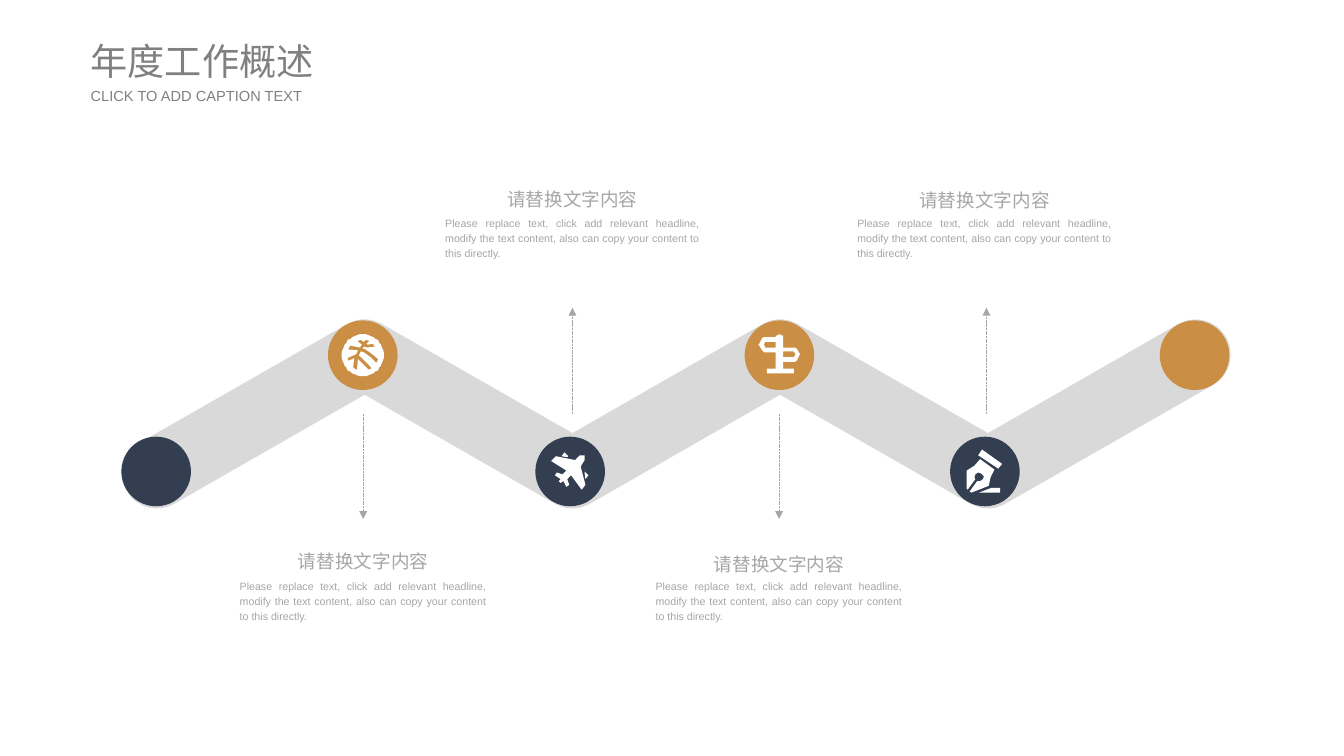
import math

from lxml import etree
from pptx import Presentation
from pptx import util as u
from pptx.dml.color import RGBColor
from pptx.enum import dml, shapes, text
from pptx.oxml.ns import qn

FONT = "Arial"
NAVY, GOLD, BAND, WHITE = "333F50", "CA8F45", "D9D9D9", "FFFFFF"
TITLE_GREY, LABEL_GREY = "808080", "A6A6A6"
HEADING = "请替换文字内容"
BODY = ("Please replace text, click add relevant headline, modify the text content, "
        "also can copy your content to this directly.")
NODE_SIZE, UPPER_Y, LOWER_Y = 1.85, 9.44, 12.53
CM_UNIT, ICON_UNIT = 0.01, 0.0254


def arc(x, y, radius, start, end, steps=24):
    angles = (math.radians(start + (end - start) * i / steps) for i in range(steps + 1))
    return [(x + radius * math.cos(a), y + radius * math.sin(a)) for a in angles]


BALL = [
    arc(0, 0, 22, 0, 360, 48),
    [(-13, -10), (-15, -7), (-15, -6), (-5, -5), (-6, -3), (-7, -1), (-16, 3),
     (-15, 6), (-9, 3), (-10, 13), (-7, 15), (-6, 15), (-5, 4), (0, 9), (6, 15),
     (9, 14), (9, 13), (3, 7), (-4, 0), (-3, -2), (-2, -4), (1, -3), (8, 2),
     (14, 8), (15, 7), (16, 4), (10, -1), (3, -6), (0, -7), (1, -9), (4, -8),
     (13, -9), (11, -11), (11, -12), (5, -11), (4, -12), (7, -15), (3, -16),
     (1, -14), (-2, -16), (-5, -15), (-6, -15), (-1, -11), (-3, -8)],
]
SIGNPOST = [
    [(4, -8), (16, -8), (18, -7), (21, -2), (22, -1), (21, 0), (18, 6), (16, 7),
     (4, 7), (4, 14), (15, 14), (15, 19), (-13, 19), (-13, 14), (-4, 14), (-4, -3),
     (-16, -3), (-18, -5), (-21, -10), (-22, -11), (-21, -12), (-18, -18),
     (-16, -19), (-4, -19), (-4, -20), (0, -22), (4, -20)],
    [(-4, -14), (-15, -14), (-16, -11), (-15, -8), (-4, -8)],
    [(15, -4), (4, -4), (4, 2), (15, 2), (17, -1)],
]
PLANE = [
    [(15, -17), (15, -12), (12, -7), (11, -5), (16, 14), (12, 19), (1, 4), (-3, 8),
     (-1, 14), (-4, 16), (-7, 10), (-10, 12), (-12, 10), (-10, 8), (-16, 4),
     (-14, 1), (-8, 3), (-4, -1), (-20, -11), (-15, -16), (5, -12), (10, -17)],
    [(19, 4), (15, 0), (15, 1), (16, 8)],
    [(-6, -20), (-9, -16), (-3, -15), (-2, -16)],
]
PEN = [
    [(-18, 19), (-19, 18), (-19, -1), (-11, -6), (-5, -13), (10, -2), (6, 6),
     (4, 15), (-14, 22), (-16, 21), (-8, 10), (-5, 10), (-2, 8), (-1, 5), (-4, 2),
     (-7, 1), (-10, 3), (-11, 6), (-10, 8), (-18, 19)],
    [(-6, 22), (16, 22), (16, 17), (7, 17)],
    [(14, -3), (18, -8), (-3, -23), (-7, -17)],
]
NODES = [
    (4.15, LOWER_Y, NAVY, None),
    (9.64, UPPER_Y, GOLD, BALL),
    (15.15, LOWER_Y, NAVY, PLANE),
    (20.71, UPPER_Y, GOLD, SIGNPOST),
    (26.17, LOWER_Y, NAVY, PEN),
    (31.74, UPPER_Y, GOLD, None),
]
LABELS = [
    (9.65, 14.38, 15.21, 7.06),
    (20.7, 14.45, 15.21, 7.06),
    (15.21, 4.75, 5.56, 7.26),
    (26.16, 4.78, 5.56, 7.26),
]
ARROWS = [(9.65, 13.79), (20.7, 13.79), (26.21, 8.18), (15.21, 8.18)]


def color(value):
    return RGBColor.from_string(value)


def paint(shape, fill):
    shape.shadow.inherit = False
    shape.fill.solid()
    shape.fill.fore_color.rgb = color(fill)
    shape.line.fill.background()


def add_outline(page, contours, fill, unit, x=0, y=0):
    first, *others = contours
    builder = page.shapes.build_freeform(*first[0], scale=float(u.Cm(unit)))
    builder.add_line_segments(first[1:], close=True)
    for contour in others:
        builder.move_to(*contour[0])
        builder.add_line_segments(contour[1:], close=True)
    paint(builder.convert_to_shape(u.Cm(x), u.Cm(y)), fill)


def add_band(page):
    left, step, high, low, radius = 417, 552, 942, 1258, 93
    slope = math.degrees(math.atan2(low - high, step))
    miter = radius / math.cos(math.radians(slope))
    upper, lower = [], []
    for i in range(1, 5):
        x = left + step * i
        if i % 2:
            upper += arc(x, high, radius, 270 - slope, 270 + slope)
            lower.append((x, high + miter))
        else:
            upper.append((x, low - miter))
            lower += arc(x, low, radius, 90 + slope, 90 - slope)
    start = arc(left, low, radius, 90 - slope, 270 - slope)
    end = arc(left + 5 * step, high, radius, -90 - slope, 90 - slope)
    add_outline(page, [start + upper + end + lower[::-1]], BAND, CM_UNIT)


def add_node(page, x, y, fill, icon):
    half = NODE_SIZE / 2
    node = page.shapes.add_shape(shapes.MSO_SHAPE.OVAL, u.Cm(x - half), u.Cm(y - half),
                                 u.Cm(NODE_SIZE), u.Cm(NODE_SIZE))
    paint(node, fill)
    if icon:
        add_outline(page, icon, WHITE, ICON_UNIT, x, y)


def add_arrow(page, x, end_y):
    arrow = page.shapes.add_connector(shapes.MSO_CONNECTOR.STRAIGHT,
                                      u.Cm(x), u.Cm(11), u.Cm(x), u.Cm(end_y))
    arrow.line.color.rgb = color(LABEL_GREY)
    arrow.line.width = u.Pt(0.5)
    arrow.line.dash_style = dml.MSO_LINE.SQUARE_DOT
    etree.SubElement(arrow.line._get_or_add_ln(), qn("a:tailEnd"), type="triangle")
    etree.SubElement(arrow._element.spPr, qn("a:effectLst"))


def write(box, words, size, fill, align, spacing=1.0, wrap=True):
    frame = box.text_frame
    frame.word_wrap = wrap
    para = frame.paragraphs[0]
    para.text = words
    para.alignment = align
    para.line_spacing = spacing
    para.font.name = FONT
    para.font.size = u.Pt(size)
    para.font.color.rgb = color(fill)


def trim(box):
    frame = box.text_frame
    frame.margin_left = frame.margin_right = frame.margin_top = frame.margin_bottom = 0
    frame.vertical_anchor = text.MSO_ANCHOR.MIDDLE


def add_box(page, x, y, width, height):
    return page.shapes.add_textbox(u.Cm(x), u.Cm(y), u.Cm(width), u.Cm(height))


def add_label(page, x, heading_y, body_y, width):
    heading = add_box(page, x - 2, heading_y, 4, 0.91)
    write(heading, HEADING, 14, LABEL_GREY, text.PP_ALIGN.CENTER, 1.2, wrap=False)
    body = add_box(page, x - width / 2, body_y, width, 1.45)
    write(body, BODY, 8, LABEL_GREY, text.PP_ALIGN.JUSTIFY, 1.2)


def add_titles(page):
    title = page.shapes.title
    title.left, title.top = u.Cm(2.41), u.Cm(0.99)
    title.width, title.height = u.Cm(6.43), u.Cm(1.24)
    caption = add_box(page, 2.41, 2.29, 6.43, 0.48)
    for box, words, size in ((title, "年度工作概述", 28),
                             (caption, "CLICK TO ADD CAPTION TEXT", 11)):
        write(box, words, size, TITLE_GREY, text.PP_ALIGN.LEFT)
        trim(box)


def main():
    deck = Presentation()
    deck.slide_width, deck.slide_height = u.Cm(35.71), u.Cm(20.09)
    page = deck.slides.add_slide(deck.slide_layouts[5])
    add_titles(page)
    add_band(page)
    for node in NODES:
        add_node(page, *node)
    for arrow in ARROWS:
        add_arrow(page, *arrow)
    for label in LABELS:
        add_label(page, *label)
    deck.save("out.pptx")


if __name__ == "__main__":
    main()
